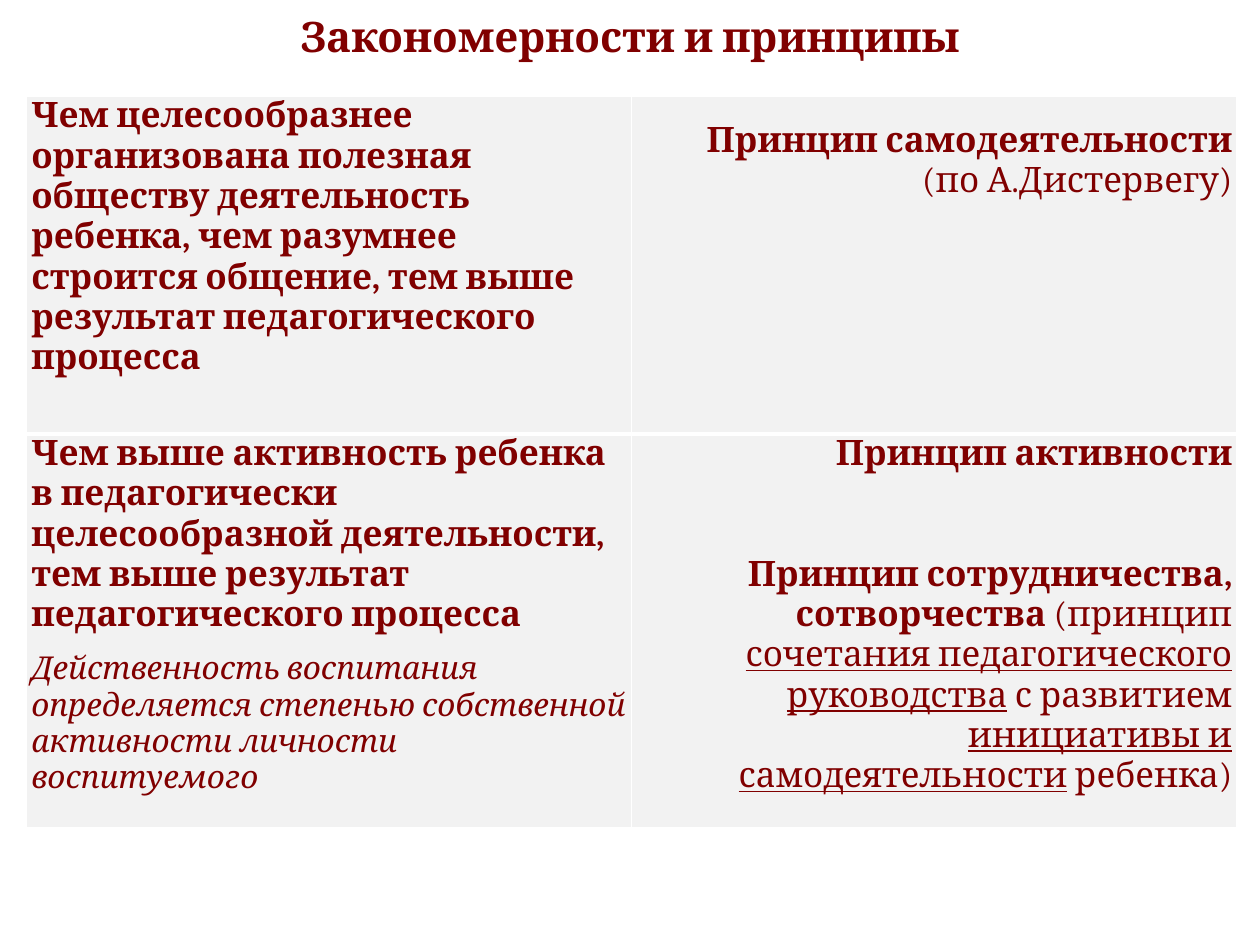
from lxml import etree
from pptx import Presentation
from pptx.dml.color import RGBColor
from pptx.enum import text
from pptx.oxml import ns
from pptx.util import Pt

FONT = "Cambria"
MAROON, GREY, WHITE = "800000", "F2F2F2", "FFFFFF"
LEFT, RIGHT, CENTER = text.PP_ALIGN.LEFT, text.PP_ALIGN.RIGHT, text.PP_ALIGN.CENTER

TITLE = "Закономерности и принципы"

# Paragraph: (space before, size, runs); run: (wording, styles), styles from "b", "i", "u"
LAW_OF_COMMUNICATION = [
    (0, 20, [("Чем целесообразнее организована полезная обществу деятельность ребенка, "
              "чем разумнее строится общение, тем выше результат педагогического процесса", "b")]),
]
SELF_ACTIVITY = [
    (0, 20, [("Принцип самодеятельности", "b")]),
    (0, 20, [("(по А.Дистервегу)", "")]),
]
LAW_OF_ACTIVITY = [
    (0, 20, [("Чем выше активность ребенка в педагогически целесообразной деятельности, "
              "тем выше результат педагогического процесса", "b")]),
    (9, 18, [("Действенность воспитания определяется степенью собственной активности "
              "личности воспитуемого", "i")]),
]
COOPERATION = [
    (0, 20, [("Принцип активности", "b")]),
    (46, 20, [("Принцип сотрудничества, сотворчества ", "b"),
              ("(принцип ", ""),
              ("сочетания педагогического руководства", "u"),
              (" с развитием ", ""),
              ("инициативы и самодеятельности", "u"),
              (" ребенка)", "")]),
]
# Row: (height, cells); cell: (top margin, paragraphs)
ROWS = [
    (193, [(0, LAW_OF_COMMUNICATION), (14, SELF_ACTIVITY)]),
    (225.3, [(0, LAW_OF_ACTIVITY), (0, COOPERATION)]),
]
ALIGNMENTS = [LEFT, RIGHT]
TABLE_LEFT, TABLE_TOP, COLUMN_WIDTH = 15.2, 55, 345.8
OUTER_LINE, DIVIDER_LINE = 1, 3


def color(value):
    return RGBColor.from_string(value)


def add_paragraphs(frame, paragraphs, alignment):
    for index, (space, size, runs) in enumerate(paragraphs):
        paragraph = frame.add_paragraph() if index else frame.paragraphs[0]
        paragraph.alignment = alignment
        if space:
            paragraph.space_before = Pt(space)
        for wording, styles in runs:
            run = paragraph.add_run()
            run.text = wording
            font = run.font
            font.name, font.size = FONT, Pt(size)
            font.bold, font.italic, font.underline = (style in styles for style in "biu")
            font.color.rgb = color(MAROON)


def add_border(cell, side, width):
    properties = cell._tc.get_or_add_tcPr()
    line = etree.SubElement(properties, ns.qn("a:ln" + side), w=str(Pt(width)))
    fill = etree.SubElement(line, ns.qn("a:solidFill"))
    etree.SubElement(fill, ns.qn("a:srgbClr"), val=WHITE)


def add_title(slide):
    box = slide.shapes.add_textbox(Pt(49.7), Pt(0), Pt(620.6), Pt(44))
    frame = box.text_frame
    frame.word_wrap = True
    frame.vertical_anchor = text.MSO_ANCHOR.MIDDLE
    add_paragraphs(frame, [(0, 24, [(TITLE, "b")])], CENTER)
    frame.paragraphs[0].line_spacing = 0.9


def add_principles_table(slide):
    heights = [height for height, _ in ROWS]
    columns = len(ALIGNMENTS)
    table = slide.shapes.add_table(
        len(ROWS), columns, Pt(TABLE_LEFT), Pt(TABLE_TOP),
        Pt(COLUMN_WIDTH * columns), Pt(sum(heights))).table
    table.first_row = table.horz_banding = False
    for column in table.columns:
        column.width = Pt(COLUMN_WIDTH)
    for row_index, (height, cells) in enumerate(ROWS):
        table.rows[row_index].height = Pt(height)
        top_line = DIVIDER_LINE if row_index else OUTER_LINE
        bottom_line = DIVIDER_LINE if row_index < len(ROWS) - 1 else OUTER_LINE
        borders = [("L", OUTER_LINE), ("R", OUTER_LINE), ("T", top_line), ("B", bottom_line)]
        for column_index, (top_margin, paragraphs) in enumerate(cells):
            cell = table.cell(row_index, column_index)
            cell.margin_left = cell.margin_right = Pt(2.7)
            cell.margin_top, cell.margin_bottom = Pt(top_margin), Pt(0)
            for side, width in borders:
                add_border(cell, side, width)
            cell.fill.solid()
            cell.fill.fore_color.rgb = color(GREY)
            add_paragraphs(cell.text_frame, paragraphs, ALIGNMENTS[column_index])


def main():
    presentation = Presentation()
    presentation.slide_width, presentation.slide_height = Pt(720), Pt(540)
    slide = presentation.slides.add_slide(presentation.slide_layouts[6])
    add_title(slide)
    add_principles_table(slide)
    presentation.save("out.pptx")


if __name__ == "__main__":
    main()
